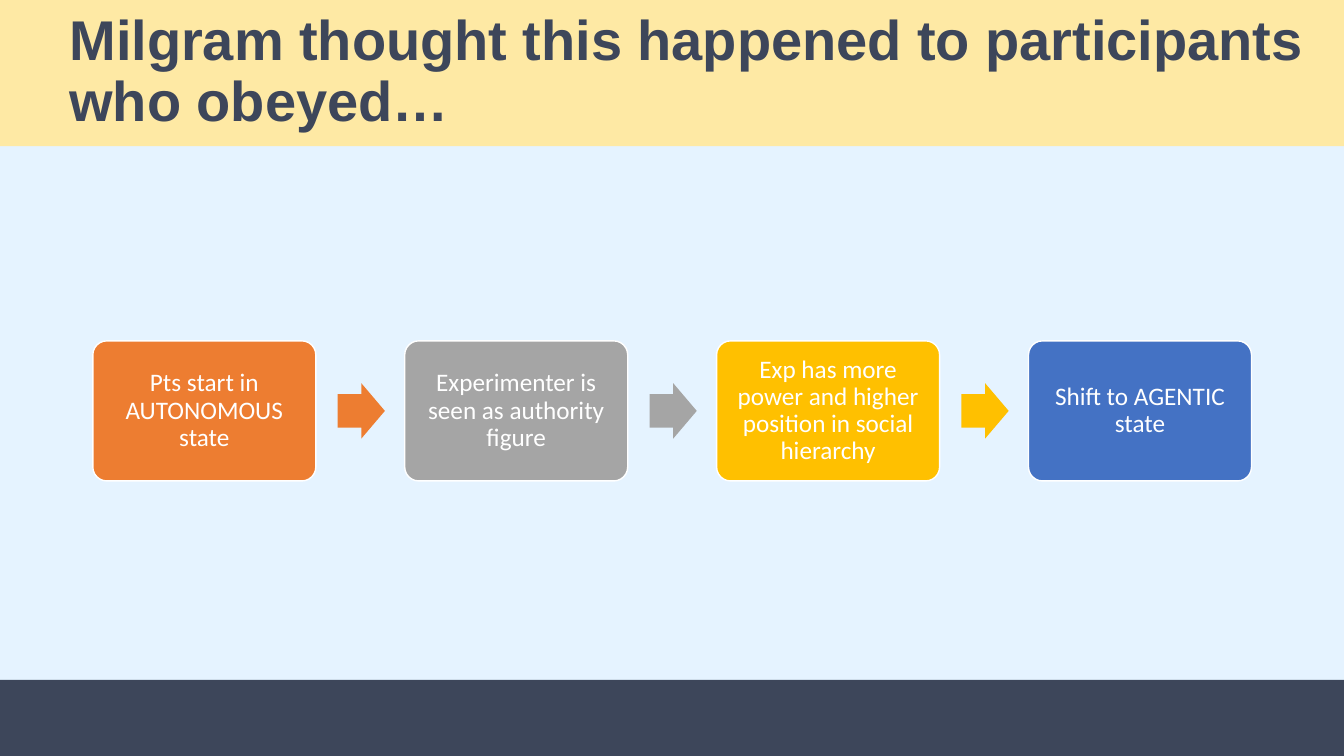
from dataclasses import dataclass

from pptx import Presentation
from pptx import util as u
from pptx.dml.color import RGBColor
from pptx.enum import shapes, text
from pptx.shapes.autoshape import Shape
from pptx.slide import Slide


@dataclass(frozen=True)
class Theme:
    background: str = "E5F3FF"
    dark: str = "3D465A"
    title_band: str = "FEE9A4"
    white: str = "FFFFFF"
    title_font: str = "Arial"
    step_font: str = "Calibri"
    title_size: int = 40
    step_size: int = 18


@dataclass(frozen=True)
class Box:
    left: float
    top: float
    width: float
    height: float


@dataclass(frozen=True)
class Step:
    label: str
    color: str


THEME = Theme()
SLIDE_W, SLIDE_H = 33.87, 19.05
FOOTER_TOP = 17.13
STEP_LEFT, STEP_PITCH = 2.34, 7.86
STEP_W, STEP_H = 5.62, 3.53
STEP_TOP = 8.59
ARROW_OFFSET = 6.17
ARROW_W, ARROW_H = 1.19, 1.4
STEPS = [
    Step("Pts start in AUTONOMOUS state", "ED7D31"),
    Step("Experimenter is seen as authority figure", "A5A5A5"),
    Step("Exp has more power and higher position in social hierarchy", "FFC000"),
    Step("Shift to AGENTIC state", "4472C4"),
]


def rgb(color: str) -> RGBColor:
    return RGBColor.from_string(color)


def add_filled(s: Slide, kind: shapes.MSO_SHAPE, box: Box, color: str) -> Shape:
    sp = s.shapes.add_shape(
        kind, u.Cm(box.left), u.Cm(box.top), u.Cm(box.width), u.Cm(box.height)
    )
    sp.shadow.inherit = False
    sp.fill.solid()
    sp.fill.fore_color.rgb = rgb(color)
    sp.line.fill.background()
    return sp


def set_text(sp: Shape, words: str, font: str, size: int, color: str,
             bold: bool, align: text.PP_ALIGN) -> None:
    tf = sp.text_frame
    tf.text = words
    tf.word_wrap = True
    tf.auto_size = text.MSO_AUTO_SIZE.NONE
    tf.vertical_anchor = text.MSO_ANCHOR.MIDDLE
    p = tf.paragraphs[0]
    p.alignment = align
    p.line_spacing = 0.9
    r = p.runs[0]
    r.font.name = font
    r.font.size = u.Pt(size)
    r.font.bold = bold
    r.font.color.rgb = rgb(color)


def add_title(s: Slide, words: str) -> None:
    sp = s.shapes.title
    sp.left, sp.top = u.Cm(0), u.Cm(0)
    sp.width, sp.height = u.Cm(SLIDE_W), u.Cm(3.68)
    sp.fill.solid()
    sp.fill.fore_color.rgb = rgb(THEME.title_band)
    set_text(sp, words, THEME.title_font, THEME.title_size, THEME.dark,
             True, text.PP_ALIGN.LEFT)
    sp.text_frame.margin_left = u.Cm(1.75)


def add_step(s: Slide, step: Step, left: float) -> None:
    sp = add_filled(s, shapes.MSO_SHAPE.ROUNDED_RECTANGLE,
                    Box(left, STEP_TOP, STEP_W, STEP_H), step.color)
    sp.adjustments[0] = 0.1
    sp.line.color.rgb = rgb(THEME.white)
    sp.line.width = u.Pt(1)
    set_text(sp, step.label, THEME.step_font, THEME.step_size, THEME.white,
             False, text.PP_ALIGN.CENTER)
    tf = sp.text_frame
    tf.margin_left = tf.margin_right = u.Cm(0.18)
    tf.margin_top = tf.margin_bottom = u.Cm(0.18)


def add_arrow(s: Slide, color: str, left: float) -> None:
    top = STEP_TOP + (STEP_H - ARROW_H) / 2
    sp = add_filled(s, shapes.MSO_SHAPE.RIGHT_ARROW,
                    Box(left, top, ARROW_W, ARROW_H), color)
    sp.adjustments[0] = 0.6
    sp.adjustments[1] = 0.5


def main() -> None:
    prs = Presentation()
    prs.slide_width, prs.slide_height = u.Cm(SLIDE_W), u.Cm(SLIDE_H)
    s = prs.slides.add_slide(prs.slide_layouts.get_by_name("Title Only"))
    s.background.fill.solid()
    s.background.fill.fore_color.rgb = rgb(THEME.background)
    add_title(s, "Milgram thought this happened to participants who obeyed…")
    add_filled(s, shapes.MSO_SHAPE.RECTANGLE,
               Box(0, FOOTER_TOP, SLIDE_W, SLIDE_H - FOOTER_TOP), THEME.dark)
    for i, step in enumerate(STEPS):
        left = STEP_LEFT + i * STEP_PITCH
        add_step(s, step, left)
        if i < len(STEPS) - 1:
            add_arrow(s, step.color, left + ARROW_OFFSET)
    prs.save("out.pptx")


if __name__ == "__main__":
    main()
